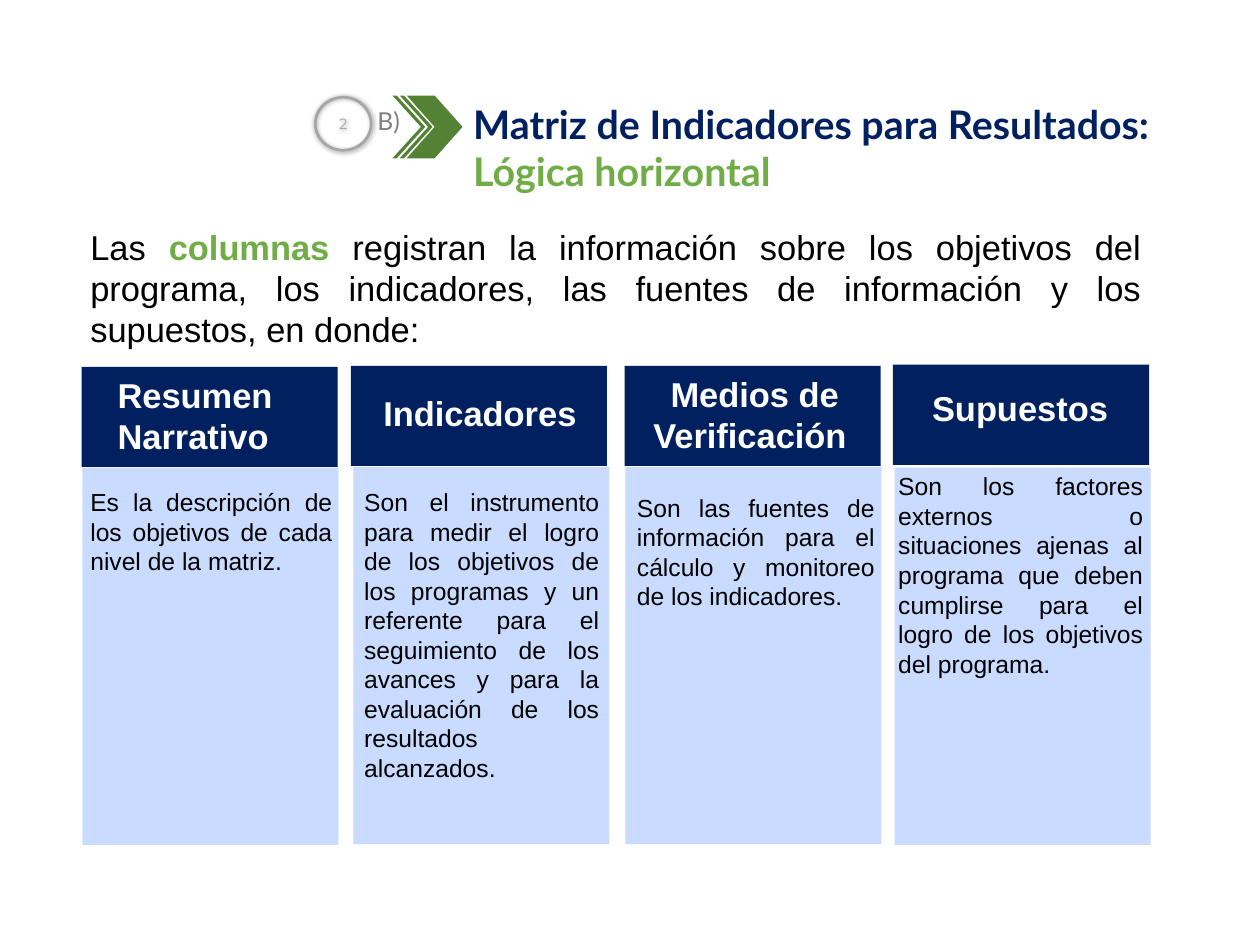
import dataclasses
import pptx
import pptx.dml.color
import pptx.enum.shapes
import pptx.enum.text
import pptx.oxml
import pptx.oxml.ns
import pptx.util

Cm = pptx.util.Cm
Pt = pptx.util.Pt
SHAPE = pptx.enum.shapes.MSO_SHAPE
ALIGN = pptx.enum.text.PP_ALIGN
ANCHOR = pptx.enum.text.MSO_ANCHOR
AUTO = pptx.enum.text.MSO_AUTO_SIZE


@dataclasses.dataclass(frozen=True)
class Theme:
    navy: str = "002060"
    pale: str = "C9DBFF"
    lime: str = "70AD47"
    green: str = "548235"
    gray: str = "808080"
    silver: str = "A6A6A6"
    white: str = "FFFFFF"
    black: str = "000000"
    body_font: str = "Arial"
    title_font: str = "Lato"
    number_font: str = "Montserrat"
    title_size: int = 32
    heading_size: int = 28
    body_size: int = 20
    number_size: int = 12


@dataclasses.dataclass(frozen=True)
class Column:
    heading: str
    heading_at: tuple
    band_at: tuple
    description: str
    description_at: tuple
    panel_at: tuple
    align: object = ALIGN.LEFT
    wrap: bool = True


BAND = (7.34, 2.87)
PANEL = (7.34, 10.82)
COLUMNS = [
    Column("Resumen Narrativo", (3.12, 10.59, 6.25, 2.64), (2.34, 10.52),
           "Es la descripción de los objetivos de cada nivel de la matriz.",
           (2.34, 13.84, 7.44, 2.82), (2.36, 13.41)),
    Column("Indicadores", (10.74, 11.13, 6.12, 1.45), (10.06, 10.49),
           "Son el instrumento para medir el logro de los objetivos de los programas y un "
           "referente para el seguimiento de los avances y para la evaluación de los "
           "resultados alcanzados.",
           (10.19, 13.84, 7.24, 8.81), (10.13, 13.39), wrap=False),
    Column("Medios de Verificación ", (18.31, 10.57, 6.65, 2.64), (17.91, 10.49),
           "Son las fuentes de información para el cálculo y monitoreo de los indicadores. ",
           (18.01, 14, 7.32, 3.68), (17.93, 13.39), align=ALIGN.CENTER),
    Column("Supuestos", (26.47, 10.97, 5.61, 1.45), (25.6, 10.46),
           "Son los factores externos o situaciones ajenas al programa que deben cumplirse "
           "para el logro de los objetivos del programa.",
           (25.5, 13.39, 7.52, 6.25), (25.65, 13.41), wrap=False),
]


class SlideBuilder:
    def __init__(self, slide, theme):
        self.slide = slide
        self.theme = theme

    def color(self, value):
        return pptx.dml.color.RGBColor.from_string(value)

    def add_spans(self, frame, parts, font, size, align=ALIGN.LEFT, bold=False):
        para = frame.paragraphs[0]
        para.alignment = align
        for text, color, strong in parts:
            span = para.add_run()
            span.text = text
            span.font.name = font
            span.font.size = Pt(size)
            span.font.bold = bold or strong
            span.font.color.rgb = self.color(color)

    def title(self, at, parts):
        holder = self.slide.shapes.title
        holder.left, holder.top, holder.width, holder.height = map(Cm, at)
        frame = holder.text_frame
        frame.auto_size = AUTO.NONE
        frame.word_wrap = True
        frame.vertical_anchor = ANCHOR.TOP
        self.add_spans(frame, parts, self.theme.title_font, self.theme.title_size, bold=True)

    def text(self, at, parts, size, font=None, align=ALIGN.LEFT, wrap=True):
        box = self.slide.shapes.add_textbox(*map(Cm, at))
        frame = box.text_frame
        frame.word_wrap = wrap
        frame.auto_size = AUTO.SHAPE_TO_FIT_TEXT
        self.add_spans(frame, parts, font or self.theme.body_font, size, align)

    def shape(self, kind, at, fill, adjustment=None):
        shape = self.slide.shapes.add_shape(kind, *map(Cm, at))
        shape.shadow.inherit = False
        shape.fill.solid()
        shape.fill.fore_color.rgb = self.color(fill)
        shape.line.fill.background()
        if adjustment is not None:
            shape.adjustments[0] = adjustment

    def badge(self, at, number):
        ring = self.slide.shapes.add_shape(SHAPE.OVAL, *map(Cm, at))
        ring.fill.background()
        ring.line.color.rgb = self.color(self.theme.silver)
        ring.line.width = Pt(2.25)
        ring.shadow.inherit = False
        effects = ring.element.spPr.find(pptx.oxml.ns.qn("a:effectLst"))
        effects.append(pptx.oxml.parse_xml(
            f'<a:outerShdw {pptx.oxml.ns.nsdecls("a")} blurRad="50800" dist="12700" '
            f'dir="2700000"><a:srgbClr val="{self.theme.black}">'
            '<a:alpha val="40000"/></a:srgbClr></a:outerShdw>'))
        ring.text_frame.vertical_anchor = ANCHOR.MIDDLE
        self.add_spans(ring.text_frame, [(number, self.theme.silver, False)],
                       self.theme.number_font, self.theme.number_size, ALIGN.CENTER)

    def column(self, column):
        theme = self.theme
        self.shape(SHAPE.RECTANGLE, column.band_at + BAND, theme.navy)
        self.shape(SHAPE.RECTANGLE, column.panel_at + PANEL, theme.pale)
        self.text(column.heading_at, [(column.heading, theme.white, True)],
                  theme.heading_size, align=column.align, wrap=column.wrap)
        self.text(column.description_at, [(column.description, theme.black, False)],
                  theme.body_size, align=ALIGN.JUSTIFY)


def main():
    theme = Theme()
    deck = pptx.Presentation()
    deck.slide_width, deck.slide_height = Cm(36.12), Cm(27.1)
    page = SlideBuilder(deck.slides.add_slide(deck.slide_layouts[5]), theme)

    page.title((13.31, 2.74, 22.73, 3),
               [("Matriz de Indicadores para Resultados: ", theme.navy, True),
                ("Lógica horizontal", theme.lime, True)])
    page.text((2.34, 6.35, 30.61, 3.84),
              [("Las ", theme.black, False),
               ("columnas", theme.lime, True),
               (" registran la información sobre los objetivos del programa, los indicadores, "
                "las fuentes de información y los supuestos, en donde:", theme.black, False)],
              theme.heading_size, align=ALIGN.JUSTIFY)
    for column in COLUMNS:
        page.column(column)

    for left, width, adjustment in [(11.66, 1.6, 0.5), (11.46, 0.94, 0.87), (11.25, 0.94, 0.87)]:
        page.shape(SHAPE.CHEVRON, (left, 2.74, width, 1.8), theme.green, adjustment)
    page.text((10.57, 2.92, 1.19, 1.12), [("B)", theme.gray, False)],
              theme.body_size, font=theme.title_font, wrap=False)
    page.badge((9.04, 2.79, 1.6, 1.52), "2")
    deck.save("out.pptx")


if __name__ == "__main__":
    main()
